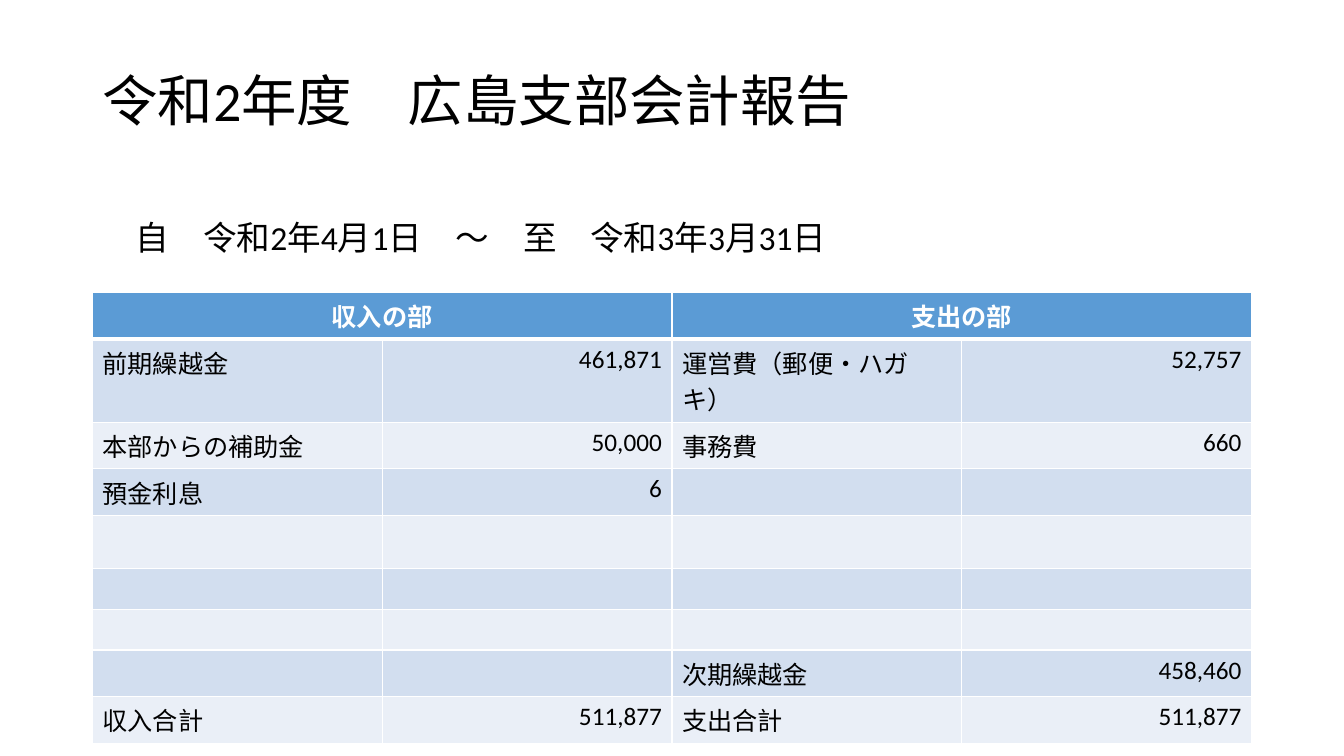
from lxml import etree
from pptx import Presentation
from pptx.dml.color import RGBColor
from pptx.enum.text import MSO_ANCHOR, PP_ALIGN
from pptx.oxml.ns import qn
from pptx.util import Pt

LEFT, CENTER, RIGHT = PP_ALIGN.LEFT, PP_ALIGN.CENTER, PP_ALIGN.RIGHT
MIDDLE = MSO_ANCHOR.MIDDLE

HEADINGS = ("収入の部", "支出の部")
ACCOUNTS = [
    ("前期繰越金", "461,871", "運営費（郵便・ハガキ）", "52,757"),
    ("本部からの補助金", "50,000", "事務費", "660"),
    ("預金利息", "6", "", ""),
    ("", "", "", ""),
    ("", "", "", ""),
    ("", "", "", ""),
    ("", "", "次期繰越金", "458,460"),
    ("収入合計", "511,877", "支出合計", "511,877"),
]
TALL_ROW = 4


def color(value):
    return RGBColor.from_string(value)


class ReportPage:
    font = "Calibri"
    ink = "000000"
    white = "FFFFFF"
    header_fill = "5B9BD5"
    bands = ("D2DEEF", "EAEFF7")
    row_height, tall_height = 29.2, 37.8

    def __init__(self, deck):
        self.page = deck.slides.add_slide(deck.slide_layouts[5])

    def add_text(self, frame, text, size, ink=ink, align=LEFT, bold=False):
        para = frame.paragraphs[0]
        para.alignment = align
        para.font.size = Pt(size)
        if text:
            span = para.add_run()
            span.text = text
            span.font.color.rgb = color(ink)
            for name, value in {"name": self.font, "size": Pt(size), "bold": bold}.items():
                setattr(span.font, name, value)
        return para

    def title(self, text, left, top, width, height):
        box = self.page.shapes.title
        place = {"left": left, "top": top, "width": width, "height": height}
        for name, value in place.items():
            setattr(box, name, Pt(value))
        frame = box.text_frame
        layout = {"vertical_anchor": MIDDLE, "word_wrap": True, "margin_bottom": Pt(18)}
        for name, value in layout.items():
            setattr(frame, name, value)
        self.add_text(frame, text, 39.6).line_spacing = 0.9

    def label(self, text, left, top, width, height):
        box = self.page.shapes.add_textbox(Pt(left), Pt(top), Pt(width), Pt(height))
        box.text_frame.word_wrap = True
        self.add_text(box.text_frame, text, 24)

    def borders(self, cell, bottom):
        """Draw white rules on all four sides, with the given bottom width."""
        properties = cell._tc.get_or_add_tcPr()
        widths = {"a:lnL": 1, "a:lnR": 1, "a:lnT": 1, "a:lnB": bottom}
        for place, (tag, width) in enumerate(widths.items()):
            line = etree.Element(qn(tag), w=str(Pt(width)))
            fill = etree.SubElement(line, qn("a:solidFill"))
            etree.SubElement(fill, qn("a:srgbClr"), val=self.white)
            properties.insert(place, line)

    def cell(self, cell, text, fill, bottom=1, **style):
        cell.fill.solid()
        cell.fill.fore_color.rgb = color(fill)
        self.borders(cell, bottom)
        self.add_text(cell.text_frame, text, 18, **style)

    def accounts(self, left, top, width):
        row_count, column_count = len(ACCOUNTS) + 1, len(ACCOUNTS[0])
        heights = [self.row_height] * row_count
        heights[TALL_ROW] = self.tall_height
        table = self.page.shapes.add_table(
            row_count, column_count, Pt(left), Pt(top), Pt(width), Pt(sum(heights))).table
        for row, height in zip(table.rows, heights):
            row.height = Pt(height)
        for column in range(column_count):
            heading = "" if column % 2 else HEADINGS[column // 2]
            self.cell(table.cell(0, column), heading, self.header_fill, 3,
                      ink=self.white, align=CENTER, bold=True)
        for column in range(0, column_count, 2):
            table.cell(0, column).merge(table.cell(0, column + 1))
        for row, entries in enumerate(ACCOUNTS, 1):
            for column, text in enumerate(entries):
                self.cell(table.cell(row, column), text, self.bands[(row - 1) % 2],
                          align=RIGHT if column % 2 else LEFT)


def main():
    deck = Presentation()
    deck.slide_width, deck.slide_height = Pt(960), Pt(540)
    report = ReportPage(deck)
    report.title("令和2年度　広島支部会計報告", 66, 28.8, 828, 104.4)
    report.accounts(66, 209, 828)
    report.label("自　令和2年4月1日　～　至　令和3年3月31日", 90, 151.2, 635, 36)
    deck.save("out.pptx")


if __name__ == "__main__":
    main()
